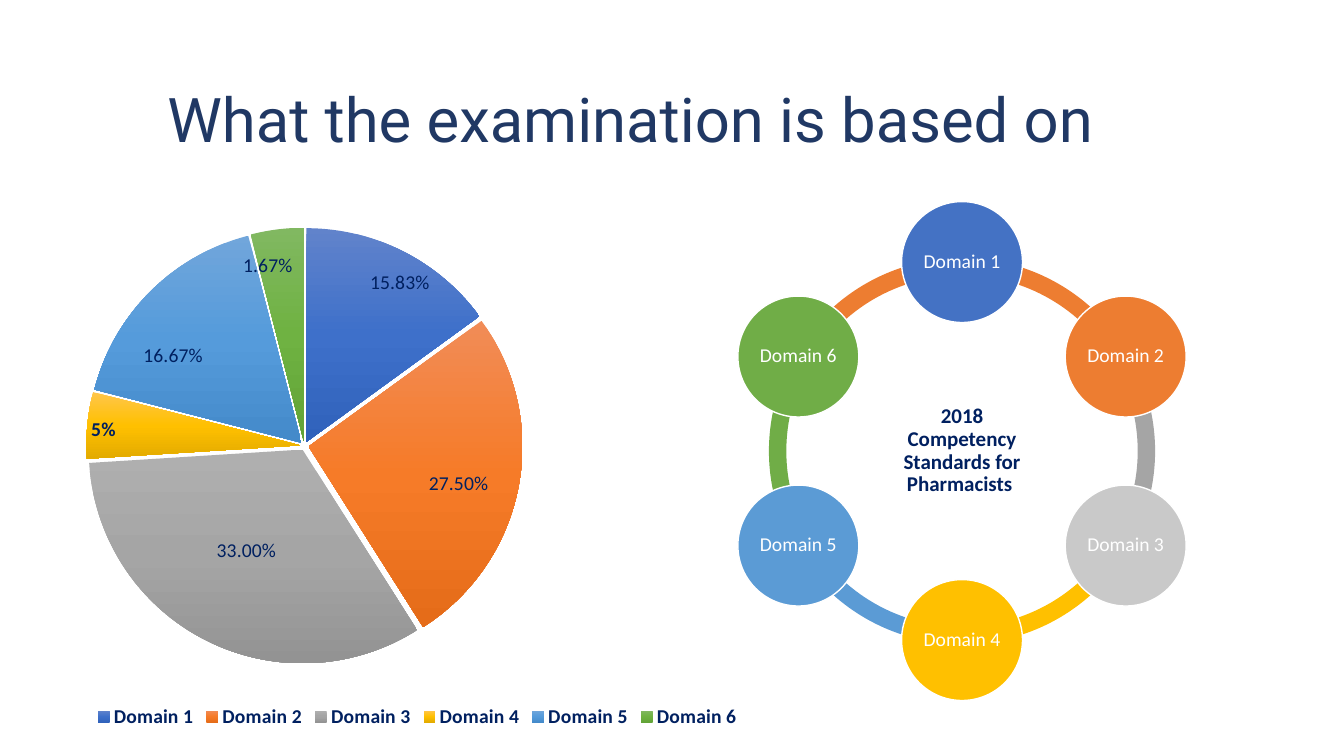
from copy import deepcopy
from math import cos, radians, sin

from lxml import etree
from pptx import Presentation
from pptx.chart.data import CategoryChartData
from pptx.dml.color import RGBColor
from pptx.enum.chart import XL_CHART_TYPE, XL_LABEL_POSITION, XL_LEGEND_POSITION
from pptx.enum.shapes import MSO_SHAPE
from pptx.enum.text import MSO_ANCHOR, PP_ALIGN
from pptx.oxml.ns import qn
from pptx.util import Pt

PIE = XL_CHART_TYPE.PIE
LABEL_CENTER = XL_LABEL_POSITION.CENTER
LEGEND_BOTTOM = XL_LEGEND_POSITION.BOTTOM
BLOCK_ARC, OVAL = MSO_SHAPE.BLOCK_ARC, MSO_SHAPE.OVAL
MIDDLE = MSO_ANCHOR.MIDDLE
LEFT, CENTER = PP_ALIGN.LEFT, PP_ALIGN.CENTER

NAVY, WHITE = "002060", "FFFFFF"
DOMAINS = [f"Domain {number}" for number in range(1, 7)]

# Per domain: value, gradient, label, label offset as a share of the chart
SLICES = [
    (15, ("6183CB", "3E70CA", "3062BB"), "15.83%", (0.06, -0.11)),
    (26, ("F18C57", "F67B28", "E56C19"), "27.50%", (0.06, 0.03)),
    (33, ("AFAFAF", "A5A5A5", "939393"), "33.00%", (-0.01, 0.01)),
    (5, ("FFC64B", "FFC000", "E3AB00"), None, (-0.12, -0.01)),
    (17, ("71A6DB", "559BDB", "448ACA"), "16.67%", (-0.07, -0.02)),
    (4, ("81B861", "6FB242", "62A336"), "1.67%", (-0.03, -0.12)),
]
# Per domain: circle colour, colour of the arc to the next circle
RING = [
    ("4472C4", "ED7D31"), ("ED7D31", "A5A5A5"), ("C9C9C9", "FFC000"),
    ("FFC000", "5B9BD5"), ("5B9BD5", "70AD47"), ("70AD47", "ED7D31"),
]


def rgb(value):
    return RGBColor.from_string(value)


def set_font(font, size, color, bold=False, name="Calibri"):
    font.name, font.size, font.bold = name, Pt(size), bold
    font.color.rgb = rgb(color)


def manual_layout(**settings):
    layout = etree.Element(qn("c:layout"))
    manual = etree.SubElement(layout, qn("c:manualLayout"))
    for tag, value in settings.items():
        etree.SubElement(manual, qn(f"c:{tag}")).set("val", str(value))
    return layout


def add_title(slide, left, top, width, height):
    title = slide.shapes.title
    title.left, title.top, title.width, title.height = map(Pt, (left, top, width, height))
    title.text_frame.vertical_anchor = MIDDLE
    title.text_frame.text = "What the examination is based on"
    heading = title.text_frame.paragraphs[0]
    heading.alignment, heading.line_spacing = LEFT, 0.9
    set_font(heading.font, 44, "203864", name="Roboto")


def add_weight_pie(slide, left, top, width, height):
    weights = CategoryChartData()
    weights.categories = DOMAINS
    weights.add_series("Series 1", [row[0] for row in SLICES])
    chart = slide.shapes.add_chart(PIE, *map(Pt, (left, top, width, height)), weights).chart
    chart.has_title = False
    set_font(chart.font, 14, NAVY, bold=True)

    # Legend
    chart.has_legend = True
    chart.legend.position = LEGEND_BOTTOM
    chart.legend.include_in_layout = False
    set_font(chart.legend.font, 14, NAVY, bold=True)

    # Plot area
    plot_area = chart.plots[0]._element.getparent()
    for layout in plot_area.findall(qn("c:layout")):
        plot_area.remove(layout)
    plot_area.insert(0, manual_layout(
        layoutTarget="inner", xMode="edge", yMode="edge", x=0.06, y=0.1, w=0.58, h=0.81))

    # Slices pulled apart slightly
    series = chart.plots[0].series[0]
    explosion = etree.Element(qn("c:explosion"))
    explosion.set("val", "2")
    series.format.fill  # makes sure the series has its formatting element
    series._element.find(qn("c:spPr")).addnext(explosion)
    labels = series.data_labels
    labels.show_percentage, labels.show_value = True, False
    set_font(labels.font, 14, NAVY, bold=True)

    for index, (_, gradient, text, (dx, dy)) in enumerate(SLICES):
        point = series.points[index]
        fill = point.format.fill
        fill.gradient()
        fill.gradient_angle = 270
        stops = series._element.findall(".//" + qn("a:gsLst"))[index]
        stops.append(deepcopy(stops[0]))
        for stop, color, position in zip(fill.gradient_stops, gradient, (0, 0.5, 1)):
            stop.color.rgb, stop.position = rgb(color), position

        label = point.data_label
        if text:
            label.text_frame.text = text
            set_font(label.text_frame.paragraphs[0].font, 14, NAVY)
        else:
            set_font(label.font, 14, NAVY, bold=True)
        label.position = LABEL_CENTER
        label_xml = series._element.findall(".//" + qn("c:dLbl"))[index]
        label_xml.find(qn("c:showVal")).set("val", "0")
        label_xml.find(qn("c:showPercent")).set("val", "1")
        label_xml.insert(1, manual_layout(x=dx, y=dy))


def add_circle(slide, center_x, center_y, diameter, color, text, size, text_color, bold=False):
    corner = (center_x - diameter / 2, center_y - diameter / 2)
    circle = slide.shapes.add_shape(OVAL, *map(Pt, (*corner, diameter, diameter)))
    circle.shadow.inherit = False
    circle.fill.solid()
    circle.fill.fore_color.rgb = rgb(color)
    circle.line.color.rgb = rgb(WHITE)
    circle.line.width = Pt(1)
    frame = circle.text_frame
    frame.word_wrap, frame.vertical_anchor = True, MIDDLE
    frame.margin_left = frame.margin_right = frame.margin_top = frame.margin_bottom = Pt(1.4)
    frame.text = text
    caption = frame.paragraphs[0]
    caption.alignment, caption.line_spacing = CENTER, 0.9
    set_font(caption.font, size, text_color, bold)


def add_domain_ring(slide, left, top, diameter):
    center_x, center_y = left + diameter / 2, top + diameter / 2
    orbit = 135
    angles = [60 * index - 90 for index in range(len(RING))]

    # Arcs between neighbouring circles
    for angle, (_, arc_color) in zip(angles, RING):
        arc = slide.shapes.add_shape(BLOCK_ARC, *map(Pt, (left, top, diameter, diameter)))
        arc.shadow.inherit = False
        arc.fill.solid()
        arc.fill.fore_color.rgb = rgb(arc_color)
        arc.line.fill.background()
        # Angles count in 60000ths of a degree, adjustments in 100000ths
        arc.adjustments[0] = angle % 360 * 0.6
        arc.adjustments[1] = (angle + 60) % 360 * 0.6
        arc.adjustments[2] = 0.045

    # Centre and the six domains
    add_circle(slide, center_x, center_y, 124, WHITE,
               "2018 Competency Standards for Pharmacists ", 15, NAVY, bold=True)
    for domain, angle, (color, _) in zip(DOMAINS, angles, RING):
        add_circle(slide, center_x + orbit * cos(radians(angle)),
                   center_y + orbit * sin(radians(angle)), 86.4, color, domain, 14, WHITE)


def main():
    deck = Presentation()
    deck.slide_width, deck.slide_height = Pt(960), Pt(540)
    slide = deck.slides.add_slide(deck.slide_layouts[5])
    add_title(slide, 112.3, 39.6, 825, 96.5)
    add_weight_pie(slide, 29.5, 109.4, 537, 414)
    add_domain_ring(slide, 549.3, 184.3, 275.8)
    deck.save("out.pptx")


if __name__ == "__main__":
    main()
